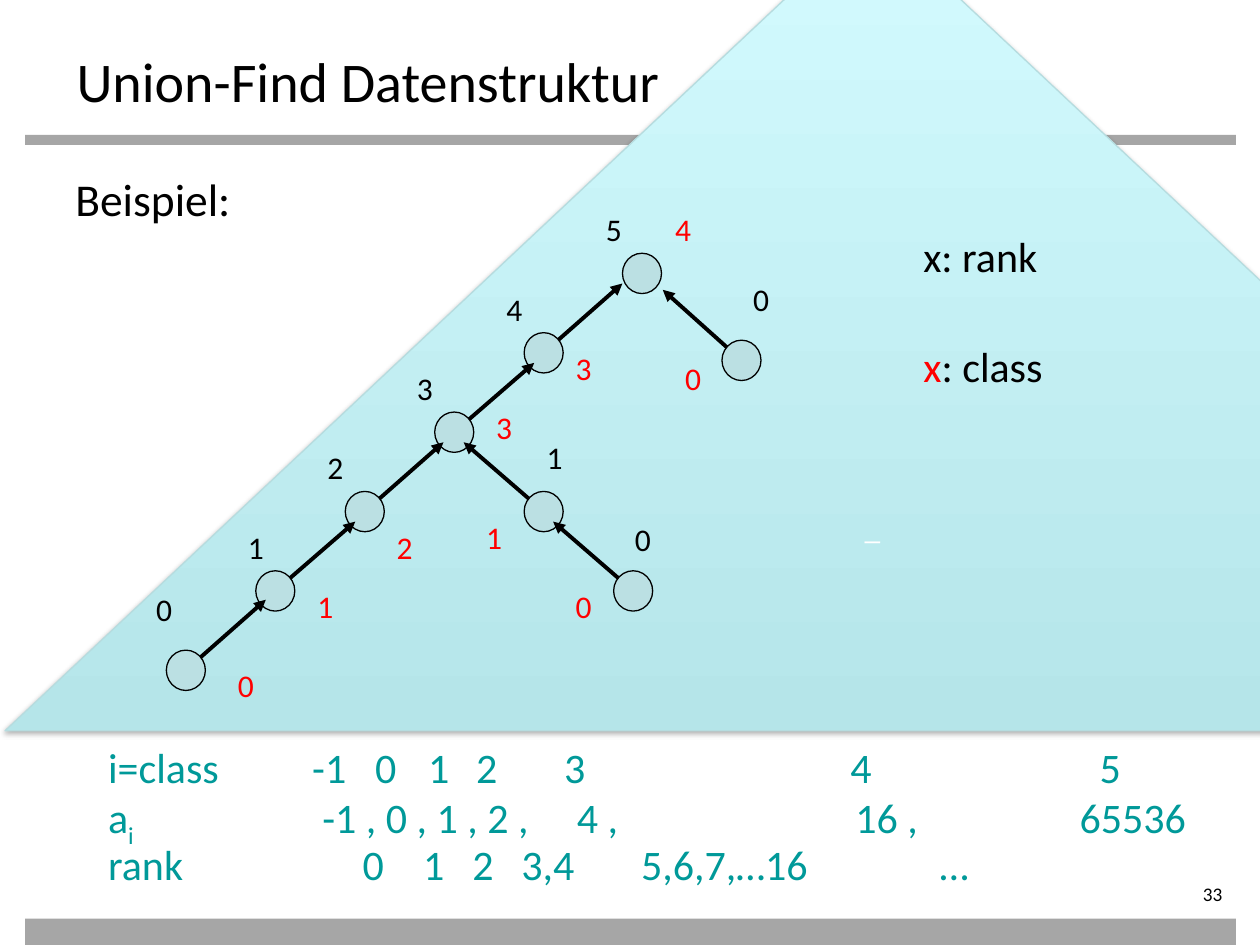
from dataclasses import dataclass

import pptx
import pptx.dml.color
import pptx.enum.dml
import pptx.enum.shapes
import pptx.enum.text
import pptx.oxml
import pptx.util
from lxml import etree
from pptx.util import Inches

NAMESPACE = "http://schemas.openxmlformats.org/drawingml/2006/main"
SHAPES = pptx.enum.shapes.MSO_SHAPE
ALIGN = pptx.enum.text.PP_ALIGN


def color(code):
    return pptx.dml.color.RGBColor.from_string(code)


@dataclass
class Theme:
    font = "Calibri"
    black = color("000000")
    white = color("FFFFFF")
    red = color("FF0000")
    teal = color("009999")
    bar = color("A6A6A6")
    node = color("BBE0E3")
    triangle_bottom = color("B5E5E9")
    triangle_top = color("D3FBFF")
    triangle_line = color("B6DCDF")
    title = pptx.util.Pt(32)
    body = pptx.util.Pt(26)
    table = pptx.util.Pt(24)
    label = pptx.util.Pt(18)
    number = pptx.util.Pt(11)


theme = Theme()
presentation = pptx.Presentation()
presentation.slide_width, presentation.slide_height = Inches(10), Inches(7.5)
slide = presentation.slides.add_slide(presentation.slide_layouts[6])
shapes = slide.shapes


def add_text(box, runs, size, wrap=False):
    """Add a text box at box (inches) with one paragraph of (text, colour) runs."""
    frame = shapes.add_textbox(*map(Inches, box)).text_frame
    frame.word_wrap = wrap
    paragraph = frame.paragraphs[0]
    for text, run_color in runs:
        run = paragraph.add_run()
        run.text = text
        run.font.name, run.font.size = theme.font, size
        run.font.color.rgb = run_color
    return frame


# Header and footer bars
for top, height in ((1.07, 0.08), (7.29, 0.21)):
    bar = shapes.add_shape(SHAPES.RECTANGLE, Inches(0.2), Inches(top), Inches(9.61), Inches(height))
    bar.shadow.inherit = False
    bar.fill.solid()
    bar.fill.fore_color.rgb = theme.bar
    bar.line.fill.background()

# Background triangle
triangle = shapes.add_shape(SHAPES.ISOSCELES_TRIANGLE, Inches(0.04), Inches(-0.66), Inches(13.77), Inches(6.46))
triangle.fill.gradient()
triangle.fill.gradient_angle = 90
for stop, stop_color, position in zip(
    triangle.fill.gradient_stops, (theme.triangle_bottom, theme.triangle_top), (0, 1)
):
    stop.color.rgb, stop.position = stop_color, position
triangle.line.color.rgb = theme.triangle_line
triangle.line.width = pptx.util.Pt(0.75)
triangle.shadow.inherit = False
effects = triangle._element.spPr.find(f"{{{NAMESPACE}}}effectLst")
effects.append(pptx.oxml.parse_xml(
    f'<a:outerShdw xmlns:a="{NAMESPACE}" blurRad="39370" dist="22860" dir="5400000" rotWithShape="0">'
    '<a:srgbClr val="000000"><a:alpha val="35000"/></a:srgbClr></a:outerShdw>'
))
triangle.text_frame.text = "_"
paragraph = triangle.text_frame.paragraphs[0]
paragraph.alignment = ALIGN.CENTER
paragraph.font.name, paragraph.font.size = theme.font, theme.label
paragraph.font.color.rgb = theme.white

# Slide number, title and body
frame = add_text((8.7, 7, 1.1, 0.22), [("33", theme.black)], theme.number, wrap=True)
frame.margin_left = frame.margin_top = frame.margin_bottom = 0
frame.paragraphs[0].alignment = ALIGN.RIGHT
frame = add_text((0.51, 0.28, 9, 0.55), [("Union-Find Datenstruktur", theme.black)], theme.title, wrap=True)
frame.margin_top = Inches(0.09)
add_text((0.5, 1.31, 9, 5.43), [("Beispiel:", theme.black)], theme.body, wrap=True)

# Tree, parents first: node corner, tip of the arrow to its parent,
# rank with its place, class with its place
nodes = [
    ((4.94, 2.01), None, "5", (4.71, 1.62), "4", (5.26, 1.62)),
    ((4.16, 2.64), (4.94, 2.25), "4", (3.92, 2.25), "3", (4.47, 2.72)),
    ((3.45, 3.27), (4.24, 2.88), "3", (3.21, 2.88), "3", (3.84, 3.19)),
    ((2.74, 3.9), (3.52, 3.51), "2", (2.5, 3.51), "2", (3.05, 4.14)),
    ((2.03, 4.53), (2.82, 4.14), "1", (1.87, 4.14), "1", (2.42, 4.61)),
    ((1.32, 5.16), (2.11, 4.76), "0", (1.14, 4.63), "0", (1.79, 5.24)),
    ((5.73, 2.7), (5.26, 2.3), "0", (5.88, 2.17), "0", (5.34, 2.8)),
    ((4.16, 3.9), (3.68, 3.51), "1", (4.24, 3.43), "1", (3.76, 4.06)),
    ((4.87, 4.53), (4.39, 4.14), "0", (4.94, 4.08), "0", (4.47, 4.61)),
]
node_width, node_height = 0.31, 0.32
for (left, top), tip, rank, rank_place, class_name, class_place in nodes:
    if tip:
        center = (left + node_width / 2, top + node_height / 2)
        edge = shapes.add_connector(pptx.enum.shapes.MSO_CONNECTOR.STRAIGHT, *map(Inches, center + tip))
        edge.line.color.rgb = theme.black
        edge.line.width = pptx.util.Pt(2.25)
        etree.SubElement(edge.line._get_or_add_ln(), f"{{{NAMESPACE}}}tailEnd", type="triangle")
        etree.SubElement(edge._element.spPr, f"{{{NAMESPACE}}}effectLst")
    node = shapes.add_shape(SHAPES.OVAL, *map(Inches, (left, top, node_width, node_height)))
    node.shadow.inherit = False
    node.fill.solid()
    node.fill.fore_color.rgb = theme.node
    node.line.color.rgb = theme.black
    node.line.width = pptx.util.Pt(0.75)
    for text, place, text_color in ((rank, rank_place, theme.black), (class_name, class_place, theme.red)):
        add_text((*place, 0.34, 0.4), [(text, text_color)], theme.label)

# Legend
add_text((7.23, 1.78, 1.2, 0.5), [("x: rank", theme.black)], theme.table)
add_text((7.23, 2.65, 1.31, 0.5), [("x", theme.red), (": class", theme.black)], theme.table)

# Table of classes: runs of each row, with tab stops in inches
rows = [
    (["i=class", "\t-1\t0\t1\t2\t3\t4\t5"], (1.62, 2.12, 2.54, 2.92, 3.62, 5.89, 7.87)),
    (["a", "i", "\t-1 , 0 , 1 , 2 ,\t4 ,\t16 ,\t65536"], (1.7, 3.72, 5.93, 7.71)),
    (["rank", "\t0\t1\t2\t3,4\t5,6,7,…16\t…"], (2.02, 2.5, 2.89, 3.28, 4.23, 6.6)),
]
frame = shapes.add_textbox(Inches(0.76), Inches(5.88), Inches(9.24), Inches(1.19)).text_frame
frame.word_wrap = True
for index, (texts, stops) in enumerate(rows):
    paragraph = frame.paragraphs[0] if index == 0 else frame.add_paragraph()
    paragraph.line_spacing = 0.9
    tabs = etree.SubElement(paragraph._p.get_or_add_pPr(), f"{{{NAMESPACE}}}tabLst")
    for stop in stops:
        etree.SubElement(tabs, f"{{{NAMESPACE}}}tab", pos=str(Inches(stop)), algn="l")
    for text in texts:
        run = paragraph.add_run()
        run.text = text
        run.font.name, run.font.size = theme.font, theme.table
        run.font.color.rgb = theme.teal
        if text == "i":
            run.font._element.set("baseline", "-25000")

presentation.save("out.pptx")
